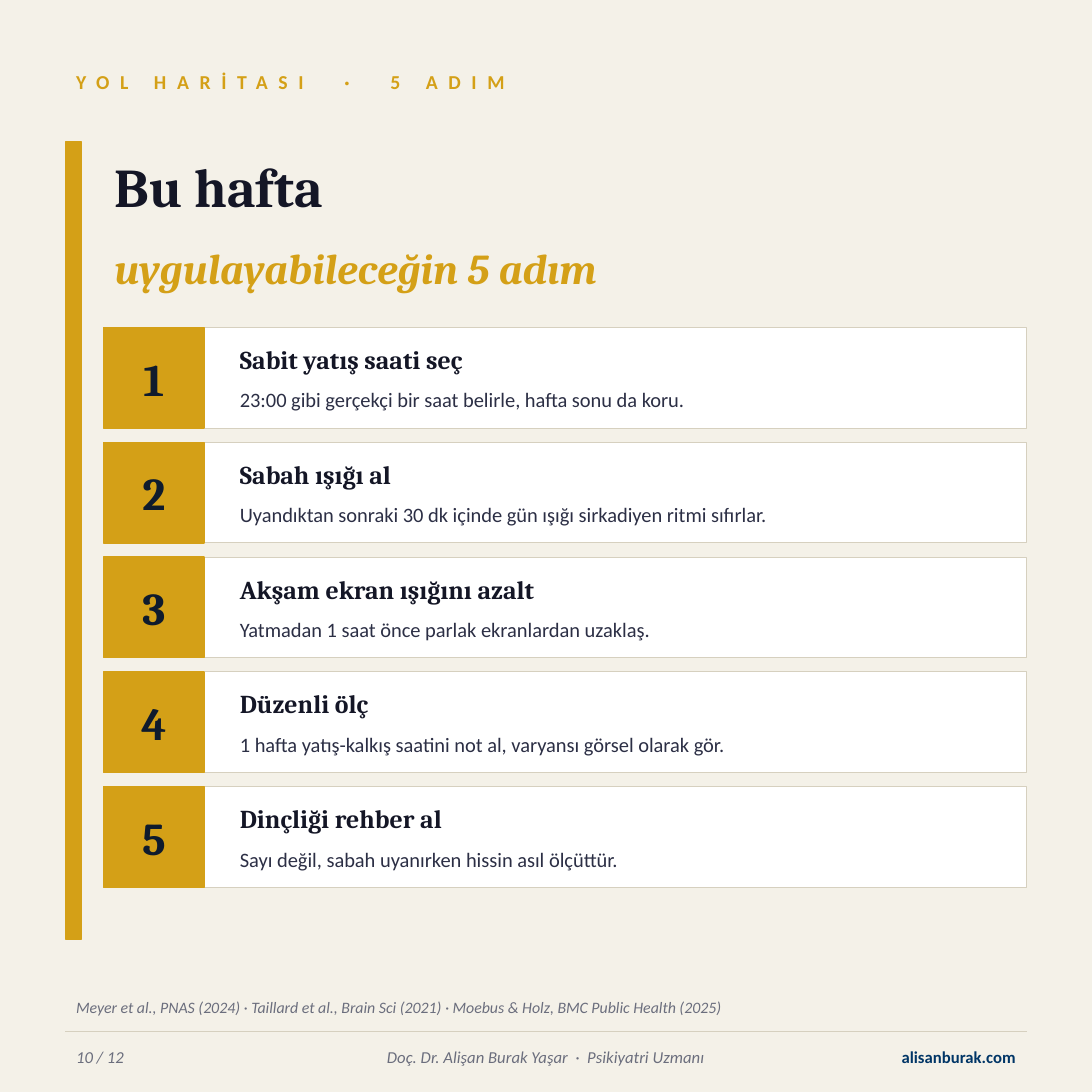
from dataclasses import dataclass
from typing import NamedTuple

from lxml import etree
from pptx import Presentation
from pptx.dml.color import RGBColor
from pptx.enum.shapes import MSO_CONNECTOR, MSO_SHAPE
from pptx.enum.text import MSO_ANCHOR, MSO_AUTO_SIZE, PP_ALIGN
from pptx.oxml.ns import qn
from pptx.util import Cm, Pt

GOLD, INK, GREY, RULE = "D4A017", "141626", "6B6E7D", "D6D0BF"
LEFT, RIGHT = 1.52, 23.88
CARD_LEFT, CARD_TOP, CARD_WIDTH = 2.41, 7.62, 21.46
CARD_HEIGHT, CARD_GAP = 2.34, 0.33


class Box(NamedTuple):
    left: float
    top: float
    width: float
    height: float


@dataclass(frozen=True)
class Style:
    size: float
    color: str
    font: str = "Calibri"
    bold: bool = False
    italic: bool = False
    align: PP_ALIGN = PP_ALIGN.LEFT
    anchor: MSO_ANCHOR = MSO_ANCHOR.MIDDLE
    spacing: float = 0


class Step(NamedTuple):
    title: str
    detail: str


EYEBROW = Style(13, GOLD, bold=True, spacing=7)
TITLE = Style(36, INK, "Cambria", bold=True)
SUBTITLE = Style(28, GOLD, "Cambria", bold=True, italic=True)
NUMBER = Style(30, "0F1B2D", "Cambria", bold=True, align=PP_ALIGN.CENTER)
STEP_TITLE = Style(17, INK, "Cambria", bold=True, anchor=MSO_ANCHOR.TOP)
STEP_DETAIL = Style(13.5, "2C2F45", anchor=MSO_ANCHOR.TOP)
SOURCES = Style(10.5, GREY, italic=True)
PAGE = Style(11, GREY, italic=True)
AUTHOR = Style(11, GREY, italic=True, align=PP_ALIGN.CENTER)
SITE = Style(11, "003566", bold=True, align=PP_ALIGN.RIGHT)

STEPS = [
    Step("Sabit yatış saati seç",
         "23:00 gibi gerçekçi bir saat belirle, hafta sonu da koru."),
    Step("Sabah ışığı al",
         "Uyandıktan sonraki 30 dk içinde gün ışığı sirkadiyen ritmi sıfırlar."),
    Step("Akşam ekran ışığını azalt",
         "Yatmadan 1 saat önce parlak ekranlardan uzaklaş."),
    Step("Düzenli ölç",
         "1 hafta yatış-kalkış saatini not al, varyansı görsel olarak gör."),
    Step("Dinçliği rehber al",
         "Sayı değil, sabah uyanırken hissin asıl ölçüttür."),
]


def rgb(color: str) -> RGBColor:
    return RGBColor.from_string(color)


def write(shape, text: str, style: Style) -> None:
    tf = shape.text_frame
    tf.text = text
    tf.word_wrap = True
    tf.auto_size = MSO_AUTO_SIZE.NONE
    tf.vertical_anchor = style.anchor
    p = tf.paragraphs[0]
    p.alignment = style.align
    r = p.runs[0]
    r.font.name = style.font
    r.font.size = Pt(style.size)
    r.font.bold = style.bold
    r.font.italic = style.italic
    r.font.color.rgb = rgb(style.color)
    if style.spacing:
        r.font._element.set("spc", str(round(style.spacing * 100)))


def add_text(s, box: Box, text: str, style: Style) -> None:
    write(s.shapes.add_textbox(*map(Cm, box)), text, style)


def add_rect(s, box: Box, fill: str, line: str, weight: float):
    sp = s.shapes.add_shape(MSO_SHAPE.RECTANGLE, *map(Cm, box))
    sp.shadow.inherit = False
    sp.fill.solid()
    sp.fill.fore_color.rgb = rgb(fill)
    sp.line.color.rgb = rgb(line)
    sp.line.width = Pt(weight)
    return sp


def add_rule(s, y: float) -> None:
    rule = s.shapes.add_connector(
        MSO_CONNECTOR.STRAIGHT, Cm(LEFT), Cm(y), Cm(RIGHT), Cm(y))
    rule.line.color.rgb = rgb(RULE)
    rule.line.width = Pt(0.75)
    etree.SubElement(rule._element.spPr, qn("a:effectLst"))


def add_step(s, number: int, step: Step) -> None:
    top = CARD_TOP + (number - 1) * (CARD_HEIGHT + CARD_GAP)
    add_rect(s, Box(CARD_LEFT, top, CARD_WIDTH, CARD_HEIGHT), "FFFFFF", RULE, 0.7)
    badge = add_rect(s, Box(CARD_LEFT, top, CARD_HEIGHT, CARD_HEIGHT), GOLD, GOLD, 1)
    write(badge, str(number), NUMBER)
    add_text(s, Box(5.33, top + 0.25, 17.53, 1.02), step.title, STEP_TITLE)
    add_text(s, Box(5.33, top + 1.27, 17.53, 1.02), step.detail, STEP_DETAIL)


def main() -> None:
    prs = Presentation()
    prs.slide_width = prs.slide_height = Cm(25.4)
    s = prs.slides.add_slide(prs.slide_layouts[5])
    s.background.fill.solid()
    s.background.fill.fore_color.rgb = rgb("F4F1E8")

    title = s.shapes.title
    title.left, title.top, title.width, title.height = map(
        Cm, Box(CARD_LEFT, 3.3, 21.59, 2.03))
    write(title, "Bu hafta", TITLE)

    add_text(s, Box(LEFT, 1.4, 22.35, 1.02), "YOL HARİTASI  ·  5 ADIM", EYEBROW)
    add_rect(s, Box(LEFT, 3.3, 0.38, 18.54), GOLD, GOLD, 1)
    add_text(s, Box(CARD_LEFT, 5.21, 21.59, 2.03),
             "uygulayabileceğin 5 adım", SUBTITLE)

    for number, step in enumerate(STEPS, 1):
        add_step(s, number, step)

    add_text(s, Box(LEFT, 22.99, 22.35, 0.89),
             "Meyer et al., PNAS (2024) · Taillard et al., Brain Sci (2021)"
             " · Moebus & Holz, BMC Public Health (2025)", SOURCES)
    add_rule(s, 24)
    add_text(s, Box(LEFT, 24.13, 3.81, 0.89), "10 / 12", PAGE)
    add_text(s, Box(5.59, 24.13, 14.22, 0.89),
             "Doç. Dr. Alişan Burak Yaşar  ·  Psikiyatri Uzmanı", AUTHOR)
    add_text(s, Box(20.07, 24.13, 3.81, 0.89), "alisanburak.com", SITE)
    prs.save("out.pptx")


if __name__ == "__main__":
    main()
